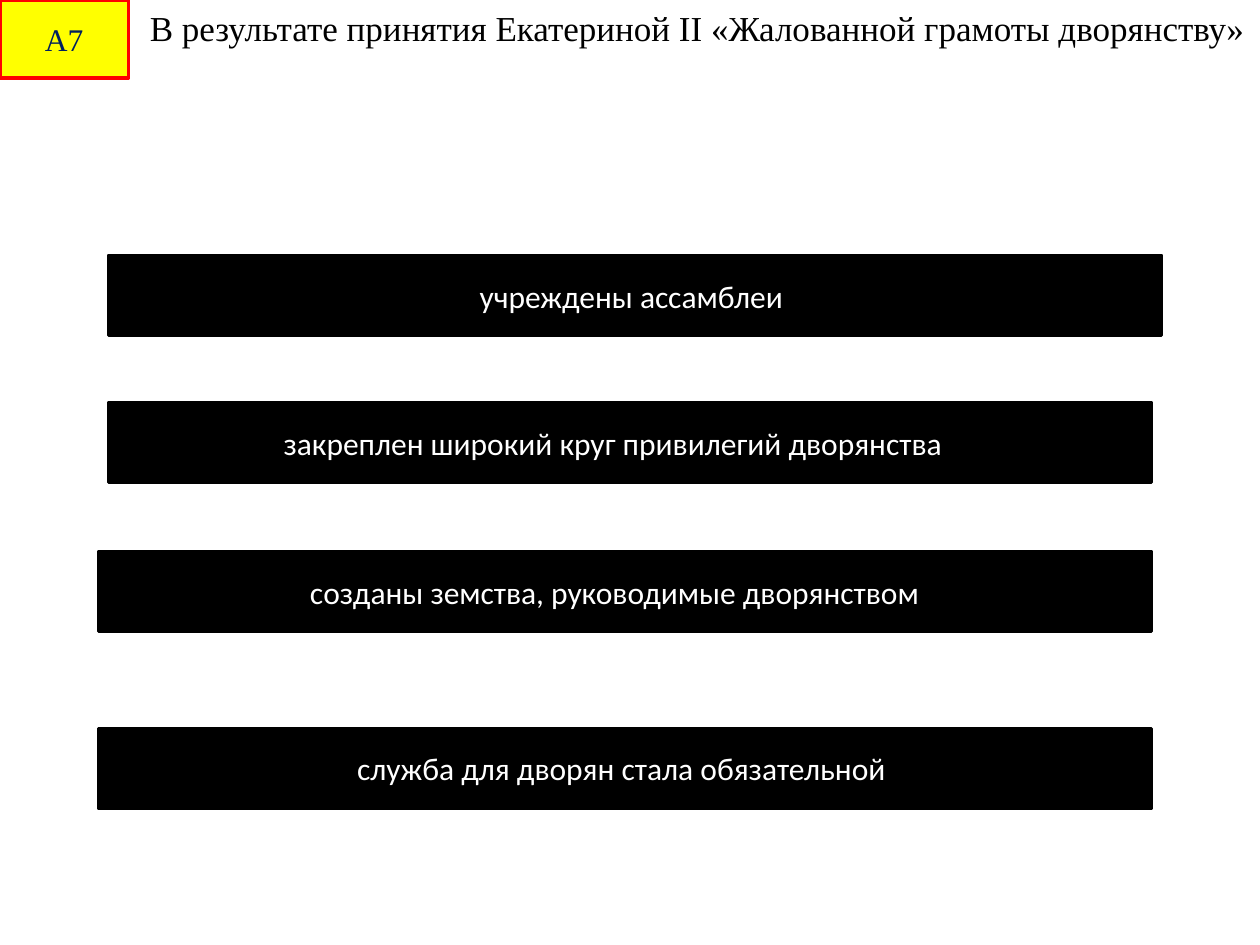
from dataclasses import dataclass

from pptx import Presentation
from pptx.dml.color import RGBColor
from pptx.enum.shapes import MSO_SHAPE as Shape
from pptx.enum.text import MSO_ANCHOR as Anchor, PP_ALIGN as Align
from pptx.util import Pt

BLACK = RGBColor(0x00, 0x00, 0x00)
WHITE = RGBColor(0xFF, 0xFF, 0xFF)
YELLOW = RGBColor(0xFF, 0xFF, 0x00)
RED = RGBColor(0xFF, 0x00, 0x00)
NAVY = RGBColor(0x00, 0x20, 0x60)
SERIF, SANS = "Times New Roman", "Calibri"


@dataclass
class Box:
    text: str
    left: float
    top: float
    width: float
    height: float = 45.4
    kind: Shape = Shape.ACTION_BUTTON_BACK_OR_PREVIOUS
    fill: RGBColor = BLACK
    line: RGBColor = BLACK
    color: RGBColor = WHITE
    font: str = SANS


def set_text(tf, text: str, font: str, size: float, color: RGBColor) -> None:
    tf.word_wrap = True
    p = tf.paragraphs[0]
    p.text = text
    for r in p.runs:
        r.font.name = font
        r.font.size = Pt(size)
        r.font.color.rgb = color


def add_box(s, box: Box) -> None:
    sp = s.shapes.add_shape(box.kind, Pt(box.left), Pt(box.top),
                            Pt(box.width), Pt(box.height))
    sp.shadow.inherit = False
    sp.fill.solid()
    sp.fill.fore_color.rgb = box.fill
    sp.line.color.rgb = box.line
    sp.line.width = Pt(2)
    tf = sp.text_frame
    set_text(tf, box.text, box.font, 18, box.color)
    tf.vertical_anchor = Anchor.MIDDLE
    tf.paragraphs[0].alignment = Align.CENTER


NUMBER = Box("А7", 0, 0, 73.4, 44.6, Shape.RECTANGLE, YELLOW, RED, NAVY, SERIF)

# A trailing tab shifts the centred answer to the left
ANSWERS = [
    Box("учреждены ассамблеи ", 61.9, 146.2, 601.9),
    Box("закреплен широкий круг привилегий дворянства \t", 61.9, 230.4, 596.2,
        kind=Shape.ACTION_BUTTON_FORWARD_OR_NEXT),
    Box("созданы земства, руководимые дворянством \t", 56.2, 315.4, 601.9),
    Box("служба для дворян стала обязательной ", 56.2, 416.2, 601.9),
]


def main() -> None:
    prs = Presentation()
    prs.slide_width, prs.slide_height = Pt(720), Pt(540)
    s = prs.slides.add_slide(prs.slide_layouts[6])

    # Question number and wording
    add_box(s, NUMBER)
    question = s.shapes.add_textbox(Pt(78.5), Pt(0), Pt(641.5), Pt(31.7))
    set_text(question.text_frame,
             "В результате принятия Екатериной II «Жалованной грамоты дворянству»",
             SERIF, 20, BLACK)

    # Answer buttons
    for answer in ANSWERS:
        add_box(s, answer)

    prs.save("out.pptx")


if __name__ == "__main__":
    main()
